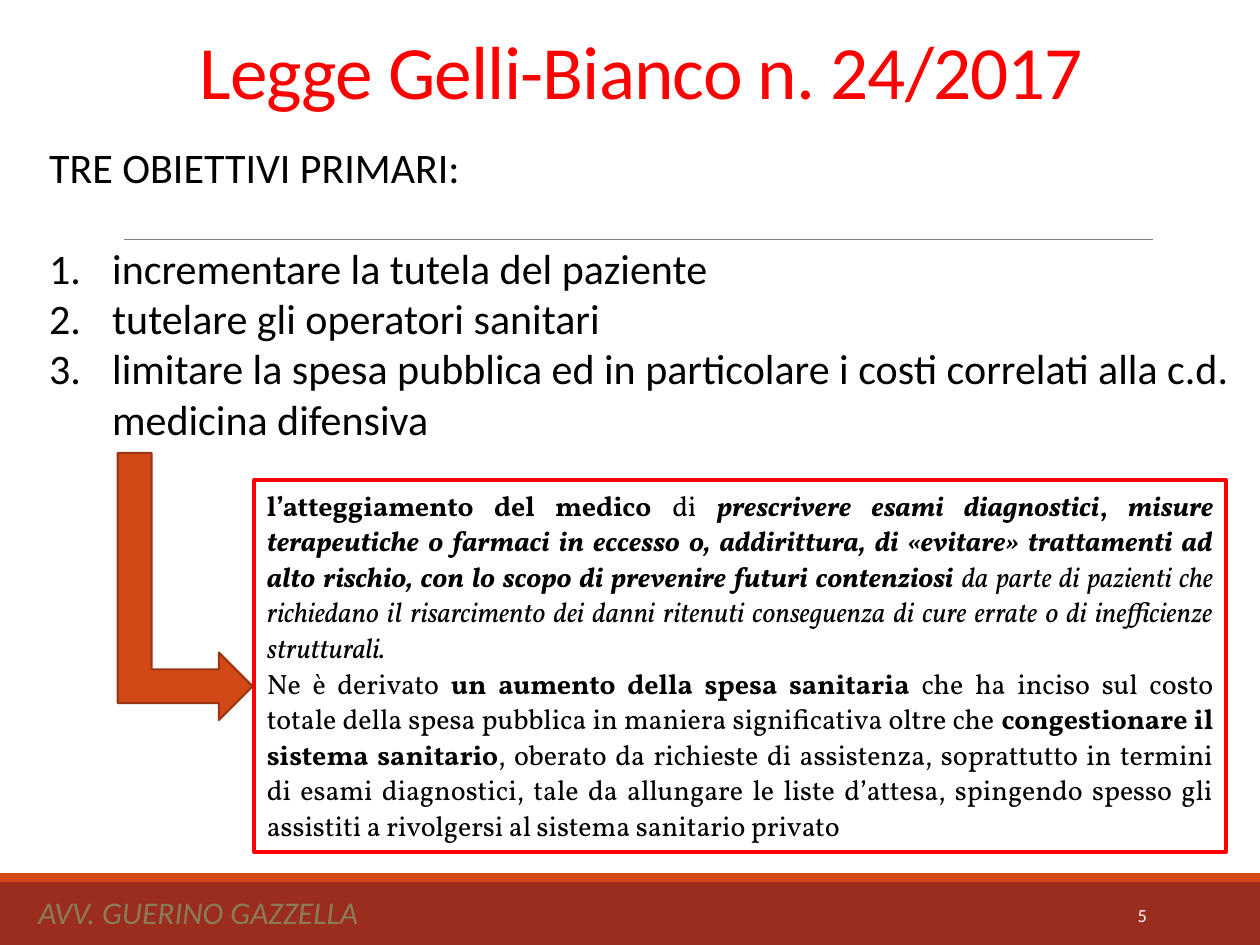
from lxml.etree import SubElement
from pptx import Presentation
from pptx.dml.color import RGBColor
from pptx.enum.shapes import MSO_CONNECTOR, MSO_SHAPE
from pptx.enum.text import MSO_ANCHOR as Anchor, MSO_AUTO_SIZE as AutoSize, PP_ALIGN as Align
from pptx.oxml.ns import qn
from pptx.util import Pt

WHITE = RGBColor(0xFF, 0xFF, 0xFF)
BLACK = RGBColor(0, 0, 0)
RED = RGBColor(0xFF, 0, 0)
GREY = RGBColor(0x80, 0x80, 0x80)
TAN = RGBColor(0x8B, 0x7B, 0x57)
ORANGE = RGBColor(0xD3, 0x48, 0x17)
DARK_ORANGE = RGBColor(0x9C, 0x35, 0x11)
BRICK = RGBColor(0x9B, 0x2D, 0x1F)

OBJECTIVES = [
    "incrementare la tutela del paziente",
    "tutelare gli operatori sanitari",
    "limitare la spesa pubblica ed in particolare i costi correlati alla c.d. medicina difensiva",
]

# Each paragraph is a list of (text, bold, italic)
DEFINITION = [
    [
        ("l’atteggiamento del medico ", True, False),
        ("di ", False, False),
        ("prescrivere esami diagnostici", True, True),
        (", ", True, False),
        ("misure terapeutiche o farmaci in eccesso o, addirittura, di «evitare» trattamenti ad "
         "alto rischio, con lo scopo di prevenire futuri contenziosi ", True, True),
        ("da parte di pazienti che richiedano il risarcimento dei danni ritenuti conseguenza "
         "di cure errate o di inefficienze strutturali. ", False, True),
    ],
    [
        ("Ne è derivato ", False, False),
        ("un aumento della spesa sanitaria ", True, False),
        ("che ha inciso sul costo totale della spesa pubblica in maniera significativa "
         "oltre che ", False, False),
        ("congestionare il sistema sanitario", True, False),
        (", oberato da richieste di assistenza, soprattutto in termini di esami diagnostici, "
         "tale da allungare le liste d’attesa, spingendo spesso gli assistiti a rivolgersi al "
         "sistema sanitario privato", False, False),
    ],
]


def add_run(paragraph, text, size, color=BLACK, font="Calibri", bold=False, italic=False):
    run = paragraph.add_run()
    run.text = text
    run.font.name, run.font.size = font, Pt(size)
    run.font.bold, run.font.italic = bold, italic
    run.font.color.rgb = color
    return run


def format_paragraph(paragraph, align=Align.LEFT, spacing=1.0, before=0):
    paragraph.alignment = align
    paragraph.line_spacing = spacing
    paragraph.space_before = Pt(before)
    paragraph.space_after = Pt(0)


def place(shape, left, top, width, height):
    shape.left, shape.top = Pt(left), Pt(top)
    shape.width, shape.height = Pt(width), Pt(height)


def prepare_frame(shape, anchor):
    frame = shape.text_frame
    frame.word_wrap = True
    frame.auto_size = AutoSize.NONE
    frame.vertical_anchor = anchor
    return frame


def add_shape(slide, kind, box, fill=None, line=None, line_width=1):
    shape = slide.shapes.add_shape(kind, *map(Pt, box))
    shape.shadow.inherit = False
    if fill is None:
        shape.fill.background()
    else:
        shape.fill.solid()
        shape.fill.fore_color.rgb = fill
    if line is None:
        shape.line.fill.background()
    else:
        shape.line.color.rgb = line
        shape.line.width = Pt(line_width)
    return shape


def add_rule(slide, left, right, y):
    rule = slide.shapes.add_connector(MSO_CONNECTOR.STRAIGHT, Pt(left), Pt(y), Pt(right), Pt(y))
    rule.line.color.rgb = GREY
    rule.line.width = Pt(0.5)
    SubElement(rule._element.spPr, qn("a:effectLst"))


def add_label(slide, text, box, align, **run_format):
    label = slide.shapes.add_textbox(*map(Pt, box))
    paragraph = prepare_frame(label, Anchor.MIDDLE).paragraphs[0]
    format_paragraph(paragraph, align)
    add_run(paragraph, text, **run_format)


def set_bullet(paragraph, numbered, indent):
    properties = paragraph._p.get_or_add_pPr()
    properties.set("marL", str(Pt(indent)))
    properties.set("indent", str(-Pt(indent)))
    if numbered:
        SubElement(properties, qn("a:buFont"), typeface="+mj-lt")
        SubElement(properties, qn("a:buAutoNum"), type="arabicPeriod")
    else:
        SubElement(properties, qn("a:buNone"))


def fill_title(title, text):
    place(title, 71.3, 25.2, 590.4, 43.9)
    paragraph = prepare_frame(title, Anchor.BOTTOM).paragraphs[0]
    format_paragraph(paragraph, Align.CENTER, spacing=0.85)
    run = add_run(paragraph, text, 43, RED)
    run.font._element.set("spc", "-50")


def fill_objectives(body, heading, items):
    place(body, 20.9, 77, 690.5, 181.4)
    frame = prepare_frame(body, Anchor.TOP)
    for index, text in enumerate([heading, *items]):
        paragraph = frame.paragraphs[0] if index == 0 else frame.add_paragraph()
        # One line of space parts the heading from the list
        format_paragraph(paragraph, before=29 if index == 1 else 0)
        set_bullet(paragraph, numbered=index > 0, indent=36 if index else 0)
        add_run(paragraph, text, 24)


def add_definition(slide, paragraphs):
    box = add_shape(slide, MSO_SHAPE.RECTANGLE, (145.4, 274.3, 555.1, 212.4),
                    line=RED, line_width=2.25)
    frame = prepare_frame(box, Anchor.TOP)
    for index, runs in enumerate(paragraphs):
        paragraph = frame.paragraphs[0] if index == 0 else frame.add_paragraph()
        format_paragraph(paragraph, Align.JUSTIFY, spacing=1.06)
        for text, bold, italic in runs:
            add_run(paragraph, text, 16, font="Vollkorn", bold=bold, italic=italic)


def main():
    presentation = Presentation()
    presentation.slide_width, presentation.slide_height = Pt(720), Pt(540)
    slide = presentation.slides.add_slide(presentation.slide_layouts[1])
    slide.background.fill.solid()
    slide.background.fill.fore_color.rgb = WHITE

    # Footer bands and rule
    add_shape(slide, MSO_SHAPE.RECTANGLE, (0, 504, 720, 36), fill=BRICK)
    add_shape(slide, MSO_SHAPE.RECTANGLE, (0, 499, 720, 5), fill=ORANGE)
    add_rule(slide, 70.6, 658.8, 136.8)

    # Title and numbered objectives
    fill_title(slide.shapes.title, "Legge Gelli-Bianco n. 24/2017")
    fill_objectives(slide.placeholders[1], "TRE OBIETTIVI PRIMARI:", OBJECTIVES)

    # Footer text
    add_label(slide, "AVV. GUERINO GAZZELLA", (-0.7, 502.6, 228.2, 37.4), Align.CENTER,
              size=18, color=TAN, italic=True)
    add_label(slide, "5", (584.6, 508.3, 77.8, 28.8), Align.RIGHT, size=10.5, color=WHITE)

    # Definition box and the arrow leading to it
    add_definition(slide, DEFINITION)
    arrow = add_shape(slide, MSO_SHAPE.BENT_UP_ARROW, (29.5, 296.6, 152.6, 77),
                      fill=ORANGE, line=DARK_ORANGE, line_width=1.25)
    arrow.rotation = 90

    presentation.save("out.pptx")


if __name__ == "__main__":
    main()
